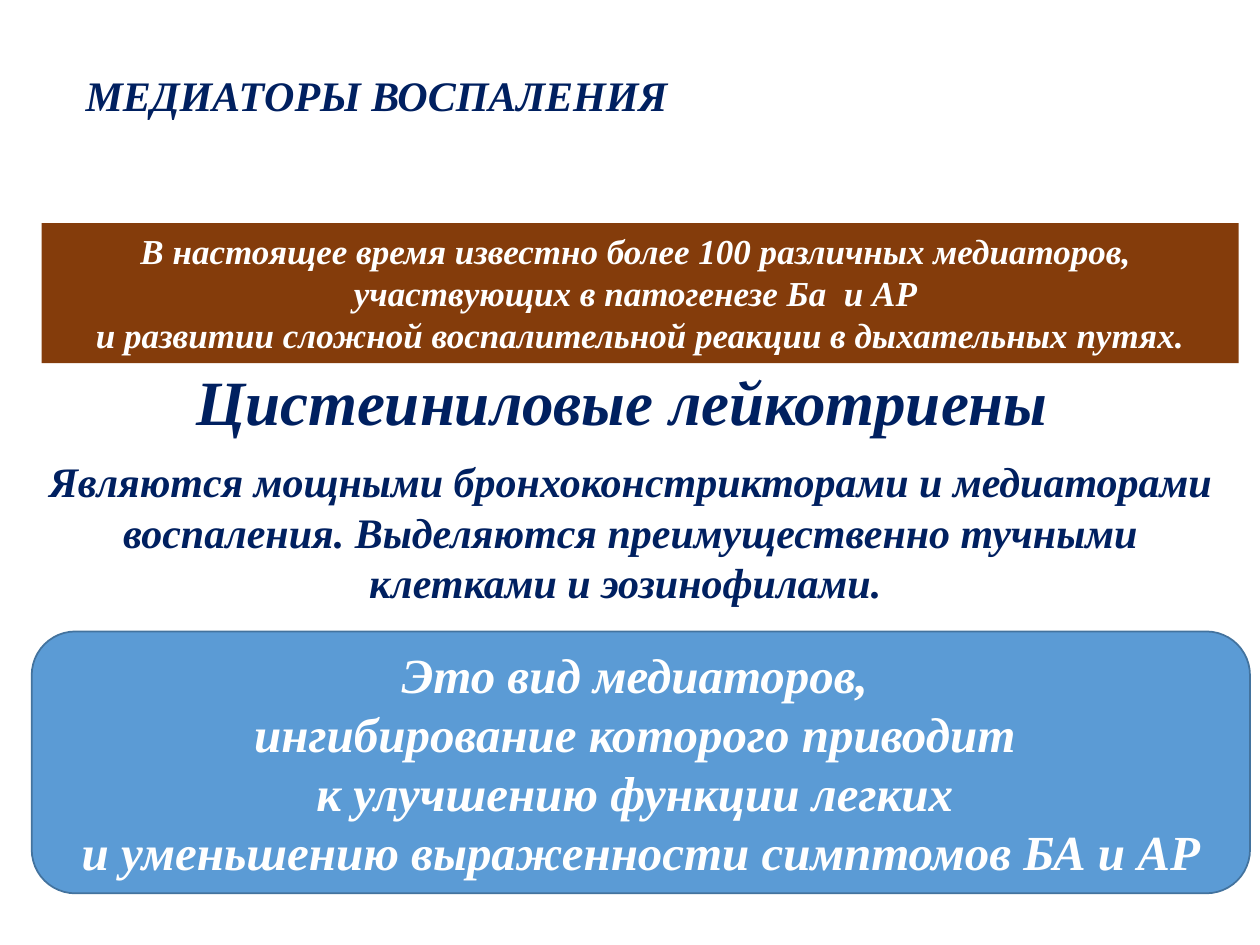
from pptx import Presentation
from pptx.dml.color import RGBColor
from pptx.enum.shapes import MSO_SHAPE
from pptx.enum.text import MSO_ANCHOR, PP_ALIGN
from pptx.util import Cm, Pt

LEFT, CENTER = PP_ALIGN.LEFT, PP_ALIGN.CENTER
TOP, MIDDLE = MSO_ANCHOR.TOP, MSO_ANCHOR.MIDDLE
RECTANGLE, ROUNDED = MSO_SHAPE.RECTANGLE, MSO_SHAPE.ROUNDED_RECTANGLE
NAVY = RGBColor(0x00, 0x20, 0x60)
WHITE = RGBColor(0xFF, 0xFF, 0xFF)
BROWN = RGBColor(0x84, 0x3C, 0x0B)
BLUE = RGBColor(0x5B, 0x9B, 0xD5)
DARK_BLUE = RGBColor(0x43, 0x73, 0x9E)
FONT = "Times New Roman"

TITLE = [("МЕДИАТОРЫ ВОСПАЛЕНИЯ", 24)]
OVERVIEW = [
    ("В настоящее время известно более 100 различных медиаторов, ", 20),
    ("участвующих в патогенезе Ба  и АР ", 20),
    ("и развитии сложной воспалительной реакции в дыхательных путях.", 20),
]
LEUKOTRIENES = [
    ("Цистеиниловые лейкотриены ", 36),
    ("Являются мощными бронхоконстрикторами и медиаторами воспаления. "
     "Выделяются преимущественно тучными клетками и эозинофилами. ", 24),
]
CONCLUSION = [
    ("Это вид медиаторов, ", 28),
    ("ингибирование которого приводит ", 28),
    ("к улучшению функции легких ", 28),
    ("и уменьшению выраженности симптомов БА и АР", 28),
]


def write(box, lines, color, anchor, align=CENTER, space_after=0):
    frame = box.text_frame
    frame.word_wrap = True
    frame.vertical_anchor = anchor
    frame.text = "\n".join(text for text, size in lines)
    for para, (text, size) in zip(frame.paragraphs, lines):
        para.alignment = align
        para.space_after = Pt(space_after)
        for span in para.runs:
            font = span.font
            font.name, font.size, font.color.rgb = FONT, Pt(size), color
            font.bold = font.italic = True


def add_panel(page, kind, place, fill, outline=None):
    panel = page.shapes.add_shape(kind, *map(Cm, place))
    panel.shadow.inherit = False
    panel.fill.solid()
    panel.fill.fore_color.rgb = fill
    if outline is None:
        panel.line.fill.background()
    else:
        panel.line.color.rgb = outline
        panel.line.width = Pt(1)
    return panel


def main():
    deck = Presentation()
    deck.slide_width, deck.slide_height = Cm(25.4), Cm(19.05)
    page = deck.slides.add_slide(deck.slide_layouts[5])

    title = page.shapes.title
    title.left, title.top, title.width, title.height = map(Cm, (1.47, 0.76, 22.66, 2.41))
    write(title, TITLE, NAVY, MIDDLE, LEFT)
    title.text_frame.paragraphs[0].line_spacing = 0.9

    overview = add_panel(page, RECTANGLE, (0.84, 4.5, 24.13, 2.82), BROWN)
    write(overview, OVERVIEW, WHITE, TOP)

    leukotrienes = page.shapes.add_textbox(*map(Cm, (0.43, 7.19, 24.56, 5.23)))
    write(leukotrienes, LEUKOTRIENES, NAVY, TOP, space_after=10)

    conclusion = add_panel(page, ROUNDED, (0.64, 12.73, 24.56, 5.28), BLUE, DARK_BLUE)
    write(conclusion, CONCLUSION, WHITE, MIDDLE)

    deck.save("out.pptx")


if __name__ == "__main__":
    main()
